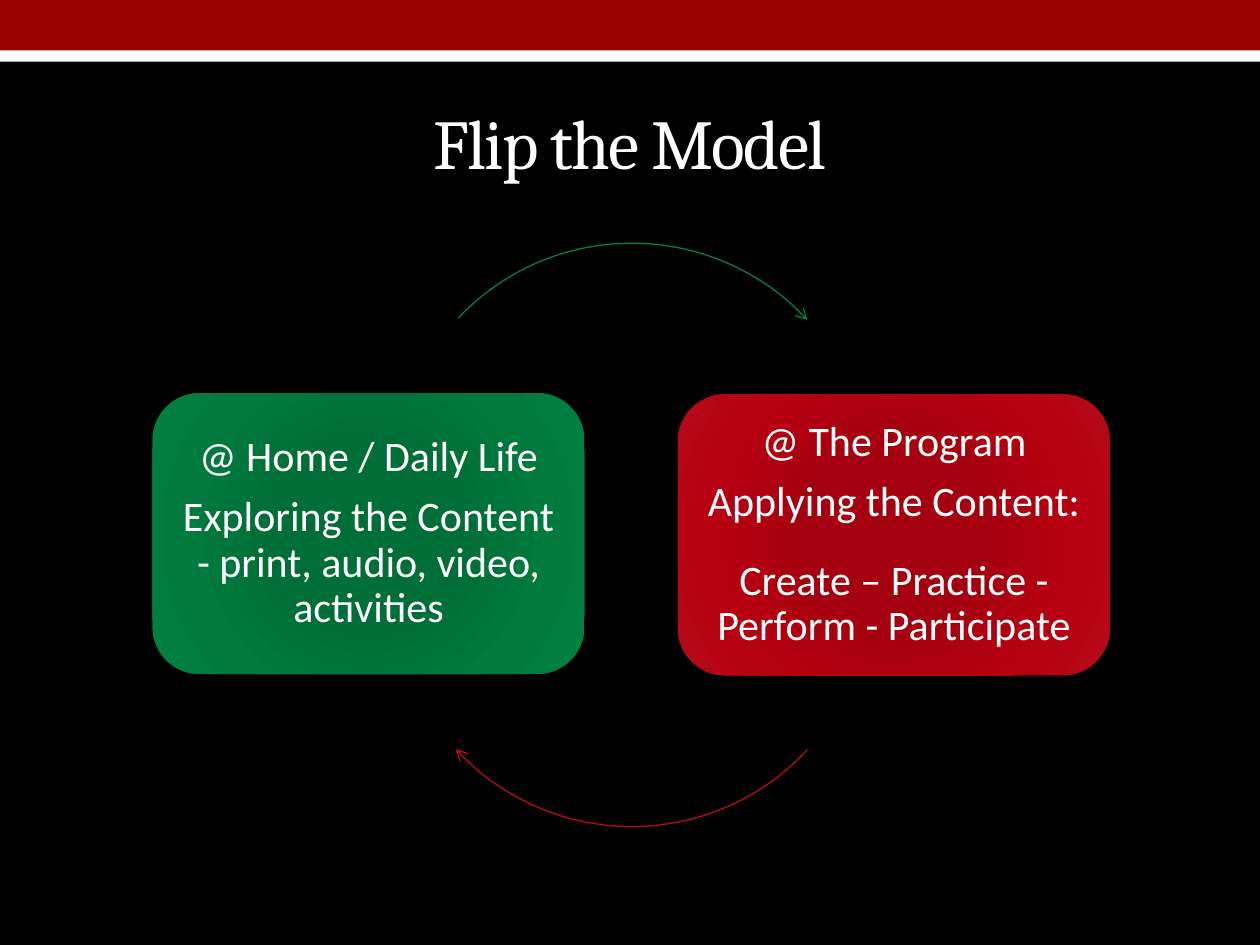
from lxml import etree
from pptx import Presentation
from pptx import util as u
from pptx.dml.color import RGBColor
from pptx.enum import shapes, text
from pptx.oxml import parse_xml
from pptx.oxml.ns import nsdecls, qn

WIDTH, HEIGHT = 10, 7.5
WHITE = "FFFFFF"
BANDS = [(0.24, 0.25, WHITE), (0, 0.4, "9B0101")]
TITLE = "Flip the Model"
CARD_LEFT, CARD_TOP, CARD_WIDTH, CARD_HEIGHT = 1.21, 3.12, 3.43, 2.23
CARD_STEP, CARD_INSET = 4.17, 0.11
STOPS = (0, 34, 70, 100)
CARDS = [
    (["@ Home / Daily Life",
      "Exploring the Content\v- print, audio, video, activities"],
     ("006E37", "006E37", "007A3D", "008040")),
    (["@ The Program",
      "Applying the Content: \vCreate – Practice - Perform - Participate"],
     ("A4000F", "A4000F", "B70011", "B50B1B")),
]
ARC_LEFT, ARC_SIZE = 3.12, 3.79
ARCS = [(1.93, 223.3, 317.3, "008040"), (2.77, 42.7, 137.5, "B50B1B")]
CARD_FORMAT = {"alignment": text.PP_ALIGN.CENTER, "line_spacing": 0.9, "space_after": u.Pt(8.4)}
TITLE_FORMAT = {"alignment": text.PP_ALIGN.CENTER}


def color(value):
    return RGBColor.from_string(value)


def apply(target, values):
    for name, value in values.items():
        setattr(target, name, value)


def add_shape(page, kind, *place, fill=None):
    shape = page.shapes.add_shape(kind, *map(u.Inches, place))
    shape.shadow.inherit = False
    shape.line.fill.background()
    if fill:
        shape.fill.solid()
        shape.fill.fore_color.rgb = color(fill)
    else:
        shape.fill.background()
    return shape


def add_text(page, place, lines, font, size, layout, margin):
    box = page.shapes.add_textbox(*map(u.Inches, place))
    frame = box.text_frame
    apply(frame, {"word_wrap": True, "vertical_anchor": text.MSO_ANCHOR.MIDDLE})
    for side in ("left", "right", "top", "bottom"):
        setattr(frame, f"margin_{side}", u.Inches(margin))
    for index, line in enumerate(lines):
        para = frame.add_paragraph() if index else frame.paragraphs[0]
        para.text = line
        apply(para, layout)
        for span in para.runs:
            apply(span.font, {"name": font, "size": u.Pt(size)})
            span.font.color.rgb = color(WHITE)
    return box


def fill_radial(shape, colors):
    stops = "".join(
        f'<a:gs pos="{stop * 1000}"><a:srgbClr val="{value}"/></a:gs>'
        for stop, value in zip(STOPS, colors))
    gradient = parse_xml(
        f'<a:gradFill {nsdecls("a")} rotWithShape="1"><a:gsLst>{stops}</a:gsLst>'
        '<a:path path="circle"><a:fillToRect l="100000" t="100000" r="100000" b="100000"/>'
        '</a:path></a:gradFill>')
    properties = shape.fill._xPr
    properties.replace(properties.find(qn("a:noFill")), gradient)


def add_card(page, column, lines, colors):
    left, top = CARD_LEFT + column * CARD_STEP, CARD_TOP + column * 0.01
    card = add_shape(page, shapes.MSO_SHAPE.ROUNDED_RECTANGLE, left, top, CARD_WIDTH, CARD_HEIGHT)
    fill_radial(card, colors)
    place = (left + CARD_INSET, top + CARD_INSET,
             CARD_WIDTH - 2 * CARD_INSET, CARD_HEIGHT - 2 * CARD_INSET)
    add_text(page, place, lines, "Calibri", 24, CARD_FORMAT, 0.1)


def add_arc(page, top, start, end, stroke):
    arc = add_shape(page, shapes.MSO_SHAPE.ARC, ARC_LEFT, top, ARC_SIZE, ARC_SIZE)
    for index, angle in enumerate((start, end)):
        arc.adjustments[index] = angle * 0.6
    arc.line.color.rgb = color(stroke)
    arc.line.width = u.Pt(0.75)
    etree.SubElement(arc.line._get_or_add_ln(), qn("a:tailEnd"), type="arrow")


def main():
    deck = Presentation()
    apply(deck, {"slide_width": u.Inches(WIDTH), "slide_height": u.Inches(HEIGHT)})
    page = deck.slides.add_slide(deck.slide_layouts[6])
    page.background.fill.solid()
    page.background.fill.fore_color.rgb = color("000000")
    for top, height, fill in BANDS:
        add_shape(page, shapes.MSO_SHAPE.RECTANGLE, 0, top, WIDTH, height, fill=fill)
    title = add_text(page, (0.5, 0.58, 9, 1.08), [TITLE], "Cambria", 40, TITLE_FORMAT, 0.05)
    title.text_frame.paragraphs[0].runs[0].font._element.set("spc", "-100")
    for column, (card, arc) in enumerate(zip(CARDS, ARCS)):
        add_card(page, column, *card)
        add_arc(page, *arc)
    deck.save("out.pptx")


if __name__ == "__main__":
    main()
